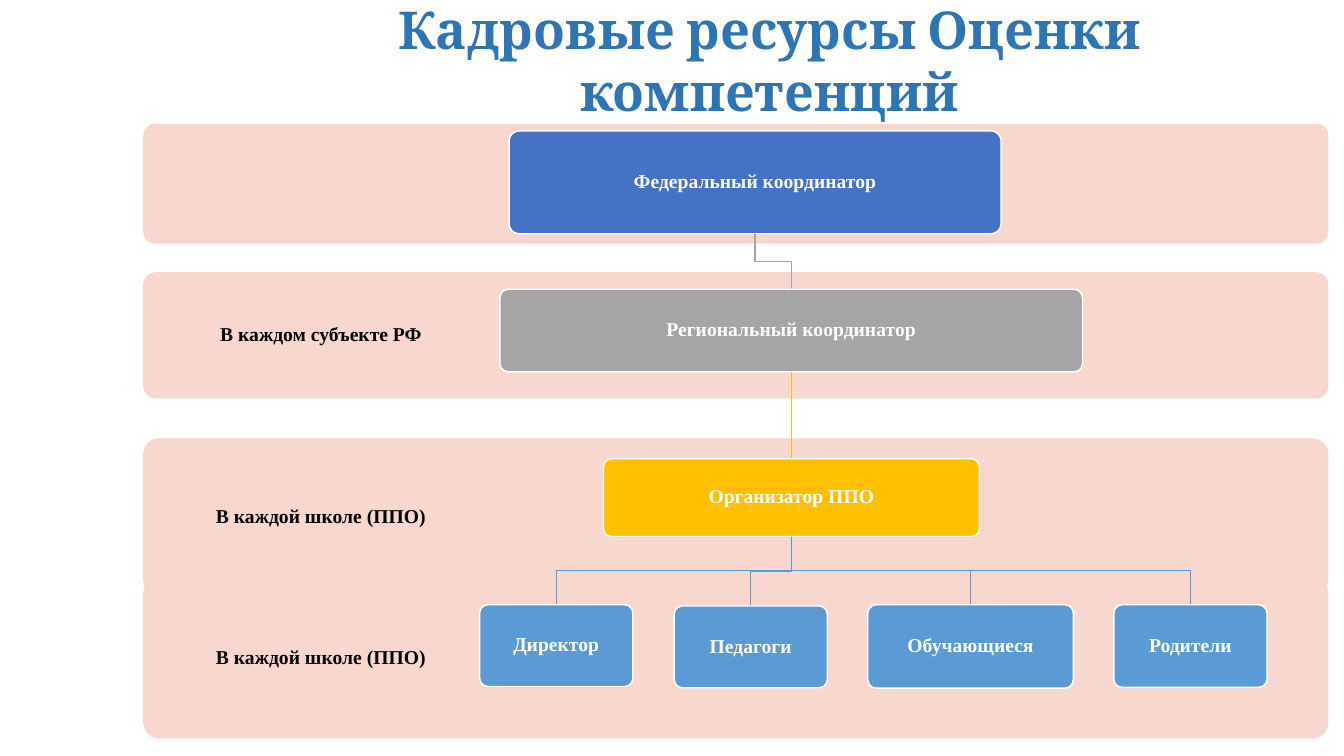
from pptx import Presentation
from pptx.dml.color import RGBColor
from pptx.enum.shapes import MSO_SHAPE
from pptx.enum.text import MSO_ANCHOR, MSO_AUTO_SIZE, PP_ALIGN
from pptx.util import Cm, Pt

ROUNDED = MSO_SHAPE.ROUNDED_RECTANGLE
MIDDLE = MSO_ANCHOR.MIDDLE
CENTER = PP_ALIGN.CENTER
NO_AUTOFIT = MSO_AUTO_SIZE.NONE
TITLE_ONLY = 5

COLORS = {
    "title": "2E75B6",
    "band": "F8D7CE",
    "federal": "4472C4",
    "regional": "A5A5A5",
    "organizer": "FFC000",
    "member": "5B9BD5",
    "white": "FFFFFF",
    "black": "000000",
}
BAND_LEFT, BAND_WIDTH, LABEL_SHARE = 3.61, 29.87, 0.3
BANDS = [
    ("В каждой школе (ППО)", 14.55, 4.06),
    ("В каждой школе (ППО)", 11.05, 3.96),
    ("В каждом субъекте РФ", 6.86, 3.18),
    ("", 3.12, 3.02),
]
FEDERAL = (12.83, 3.3, 12.4, 2.59)
REGIONAL = (12.6, 7.29, 14.68, 2.08)
ORGANIZER = (15.21, 11.56, 9.47, 1.96)
NODES = [
    ("Федеральный координатор", "federal", FEDERAL, None),
    ("Региональный координатор", "regional", REGIONAL, FEDERAL),
    ("Организатор ППО", "organizer", ORGANIZER, REGIONAL),
    ("Директор", "member", (12.09, 15.24, 3.86, 2.06), ORGANIZER),
    ("Педагоги", "member", (16.99, 15.27, 3.86, 2.06), ORGANIZER),
    ("Обучающиеся", "member", (21.87, 15.24, 5.18, 2.1), ORGANIZER),
    ("Родители", "member", (28.07, 15.24, 3.86, 2.08), ORGANIZER),
]


class Chart:
    """Draws the organisation chart on one slide in a single style."""

    def __init__(self, prs):
        self.slide = prs.slides.add_slide(prs.slide_layouts[TITLE_ONLY])
        self.label_font = {"name": "Times New Roman", "size": Pt(14), "bold": True}
        self.title_font = {"name": "Cambria", "size": Pt(37.3), "bold": True}

    def rgb(self, name):
        return RGBColor.from_string(COLORS[name])

    def label(self, sp, text, font, color, insets, spacing=1.0):
        tf = sp.text_frame
        left, top, right, bottom = map(Cm, insets)
        frame = {"word_wrap": True, "auto_size": NO_AUTOFIT, "vertical_anchor": MIDDLE,
                 "margin_left": left, "margin_top": top,
                 "margin_right": right, "margin_bottom": bottom}
        for name, value in frame.items():
            setattr(tf, name, value)
        p = tf.paragraphs[0]
        p.alignment, p.line_spacing = CENTER, spacing
        r = p.add_run()
        r.text = text
        for name, value in font.items():
            setattr(r.font, name, value)
        r.font.color.rgb = self.rgb(color)

    def title(self, text, box):
        sp = self.slide.shapes.title
        sp.left, sp.top, sp.width, sp.height = map(Cm, box)
        self.label(sp, text, self.title_font, "title", (0.38, 0.18, 0.38, 0.18))

    def rounded(self, box, color):
        sp = self.slide.shapes.add_shape(ROUNDED, *map(Cm, box))
        sp.adjustments[0] = 0.1
        sp.shadow.inherit = False
        sp.fill.solid()
        sp.fill.fore_color.rgb = self.rgb(color)
        sp.line.fill.background()
        return sp

    def band(self, text, top, height):
        sp = self.rounded((BAND_LEFT, top, BAND_WIDTH, height), "band")
        if text:
            right = BAND_WIDTH * (1 - LABEL_SHARE) + 0.28
            self.label(sp, text, self.label_font, "black", (0.28, 0.28, right, 0.28), 0.9)

    def node(self, text, color, box):
        sp = self.rounded(box, color)
        self.outline(sp, "white")
        self.label(sp, text, self.label_font, "white", (0.22,) * 4, 0.9)

    def outline(self, sp, color):
        sp.line.color.rgb = self.rgb(color)
        sp.line.width = Pt(1)

    def link(self, parent, child, color):
        x1, y1 = parent[0] + parent[2] / 2, parent[1] + parent[3]
        x2, y2 = child[0] + child[2] / 2, child[1]
        middle = (y1 + y2) / 2
        builder = self.slide.shapes.build_freeform(Cm(x1), Cm(y1))
        bends = [(x1, middle), (x2, middle), (x2, y2)]
        builder.add_line_segments([(Cm(x), Cm(y)) for x, y in bends], close=False)
        sp = builder.convert_to_shape()
        sp.shadow.inherit = False
        sp.fill.background()
        self.outline(sp, color)


def main():
    prs = Presentation()
    prs.slide_width, prs.slide_height = Cm(33.87), Cm(19.05)
    chart = Chart(prs)
    chart.title("Кадровые ресурсы Оценки компетенций", (4.93, 0.13, 28.93, 2.74))
    for text, top, height in BANDS:
        chart.band(text, top, height)
    for text, color, box, parent in NODES:
        if parent:
            chart.link(parent, box, color)
        chart.node(text, color, box)
    prs.save("out.pptx")


if __name__ == "__main__":
    main()
